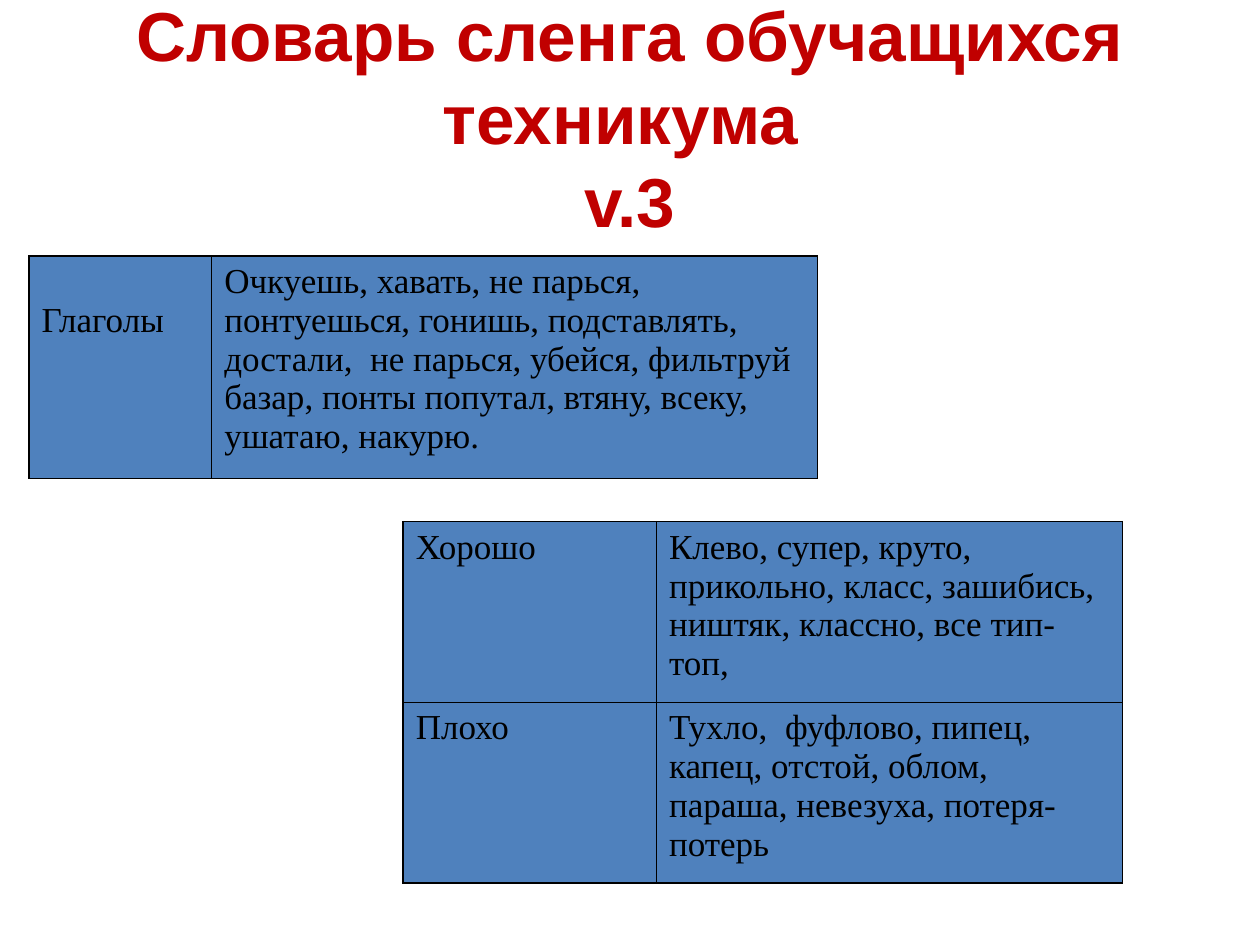
import pptx
import pptx.util
import pptx.dml.color
import pptx.enum.text
import lxml.etree

Inches = pptx.util.Inches
Pt = pptx.util.Pt
RGB = pptx.dml.color.RGBColor.from_string

theme = {
    "title": ("Arial", 39.6, "C00000"),
    "body": ("Times New Roman", 20, "000000"),
    "fill": "4F81BD",
    "line": "000000",
}


def style(para, role):
    name, size, color = theme[role]
    para.font.name = name
    para.font.size = Pt(size)
    para.font.color.rgb = RGB(color)


def border(cell):
    props = cell._tc.get_or_add_tcPr()
    ns = "http://schemas.openxmlformats.org/drawingml/2006/main"
    for spot, side in enumerate(("lnL", "lnR", "lnT", "lnB")):
        line = lxml.etree.Element(f"{{{ns}}}{side}", w=str(Pt(1)))
        fill = lxml.etree.SubElement(line, f"{{{ns}}}solidFill")
        lxml.etree.SubElement(fill, f"{{{ns}}}srgbClr", val=theme["line"])
        props.insert(spot, line)


deck = pptx.Presentation()
deck.slide_width = Inches(10)
deck.slide_height = Inches(7.5)
slide = deck.slides.add_slide(deck.slide_layouts[6])

title = slide.shapes.add_textbox(Inches(0.5), Inches(0.3), Inches(9), Inches(1.25))
frame = title.text_frame
frame.word_wrap = True
frame.vertical_anchor = pptx.enum.text.MSO_ANCHOR.MIDDLE
head = frame.paragraphs[0]
head.text = "Словарь сленга обучащихся техникума \vv.3"
head.alignment = pptx.enum.text.PP_ALIGN.CENTER
style(head, "title")
head.font.bold = True

tables = [
    (0.23, 2.03, (1.45, 4.81), 1.64, 0.36, [
        ("Глаголы", "Очкуешь, хавать, не парься, понтуешься, гонишь, подставлять, "
                    "достали,  не парься, убейся, фильтруй базар, понты попутал, "
                    "втяну, всеку, ушатаю, накурю."),
    ]),
    (3.2, 4.14, (2.01, 3.7), 1.33, 0.05, [
        ("Хорошо", "Клево, супер, круто, прикольно, класс, зашибись, ништяк, "
                   "классно, все тип-топ,"),
        ("Плохо", "Тухло,  фуфлово, пипец, капец, отстой, облом, параша, "
                  "невезуха, потеря-потерь"),
    ]),
]

for left, top, widths, height, inset, rows in tables:
    grid = slide.shapes.add_table(
        len(rows), len(widths), Inches(left), Inches(top),
        Inches(sum(widths)), Inches(height * len(rows))).table
    grid.first_row = False
    grid.horz_banding = False
    for col, width in zip(grid.columns, widths):
        col.width = Inches(width)
    for r, row in enumerate(rows):
        for c, text in enumerate(row):
            cell = grid.cell(r, c)
            cell.text = text
            cell.fill.solid()
            cell.fill.fore_color.rgb = RGB(theme["fill"])
            style(cell.text_frame.paragraphs[0], "body")
            border(cell)
        grid.cell(r, 0).margin_top = Inches(inset)

deck.save("out.pptx")
